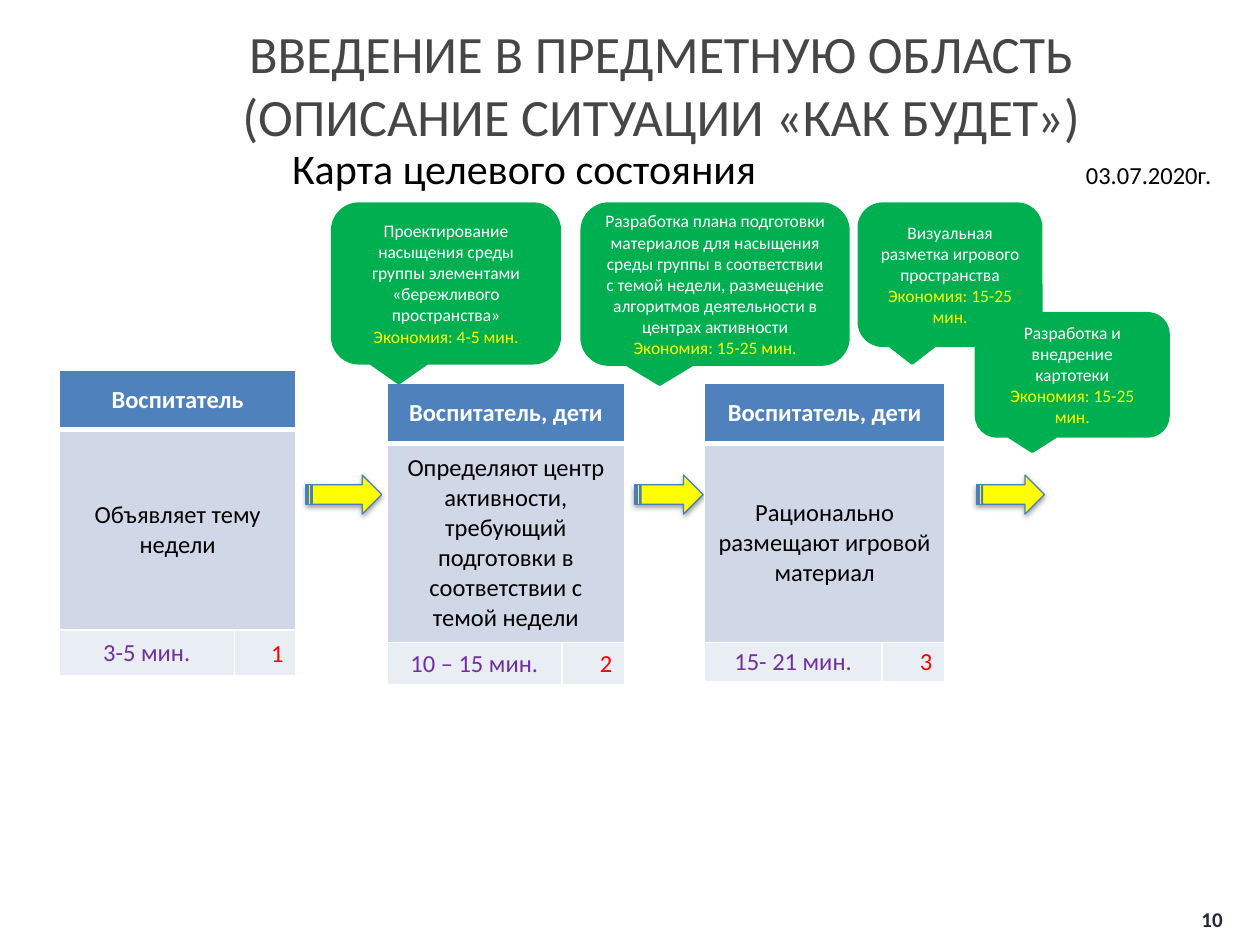
from dataclasses import dataclass

import lxml.etree
import pptx
import pptx.dml.color
import pptx.enum.shapes
import pptx.enum.text
import pptx.oxml
import pptx.oxml.ns
import pptx.util

Inches = pptx.util.Inches
Pt = pptx.util.Pt
SHAPE = pptx.enum.shapes.MSO_SHAPE
ALIGN = pptx.enum.text.PP_ALIGN
ANCHOR = pptx.enum.text.MSO_ANCHOR
NS = pptx.oxml.ns.nsdecls("a")


@dataclass(frozen=True)
class Theme:
    """Colours, font and type sizes of the slide."""
    font: str = "Calibri"
    title: str = "464646"
    number: str = "24263C"
    black: str = "000000"
    white: str = "FFFFFF"
    green: str = "00B050"
    yellow: str = "FFFF00"
    arrow_line: str = "4B7EBC"
    header: str = "4F81BD"
    body: str = "D0D8E8"
    footer: str = "E9EDF4"
    time: str = "7030A0"
    step: str = "FF0000"
    title_size: int = 30
    heading_size: int = 24
    table_size: int = 14
    number_size: int = 12
    callout_size: int = 10


THEME = Theme()

STEPS = [
    ((0.47, 2.94), (1.39, 0.49), (0.47, 1.59, 0.36), 0.05,
     ("Воспитатель", "Объявляет тему недели", "3-5 мин.")),
    ((3.07, 3.04), (1.39, 0.5), (0.48, 1.58, 0.32), 0.05,
     ("Воспитатель, дети",
      "Определяют центр активности, требующий подготовки в соответствии с темой недели",
      "10 – 15 мин.")),
    ((5.59, 3.04), (1.41, 0.5), (0.48, 1.58, 0.31), 0.04,
     ("Воспитатель, дети", "Рационально размещают игровой материал", "15- 21 мин.")),
]

ARROWS = [(2.43, 3.77, 0.6, 0.31), (5.04, 3.77, 0.54, 0.31), (7.75, 3.77, 0.54, 0.31)]

CALLOUTS = [
    ((2.64, 1.62, 1.8, 1.26),
     "Проектирование насыщения среды группы элементами «бережливого пространства»",
     "Экономия: 4-5 мин."),
    ((6.82, 1.62, 1.44, 1.12), "Визуальная разметка игрового пространства",
     "Экономия: 15-25 мин."),
    ((7.75, 2.49, 1.52, 0.97), "Разработка и внедрение картотеки",
     "Экономия: 15-25 мин."),
    ((4.62, 1.62, 2.11, 1.27),
     "Разработка плана подготовки материалов для насыщения среды группы в соответствии "
     "с темой недели, размещение алгоритмов деятельности в центрах активности",
     "Экономия: 15-25 мин."),
]


def rgb(color):
    """Return a colour object for a hex string."""
    return pptx.dml.color.RGBColor.from_string(color)


def style_font(font, size, color, bold=False):
    """Set the face, size, colour and weight of a font."""
    font.name, font.size, font.bold = THEME.font, Pt(size), bold
    font.color.rgb = rgb(color)


def write(p, text, size, color, align=ALIGN.CENTER, bold=False):
    """Fill a paragraph with evenly styled text."""
    p.text, p.alignment = text, align
    style_font(p.font, size, color, bold)


def add_text_frame(slide, box, wrap=True):
    """Add a middle-anchored text box and return its frame."""
    tf = slide.shapes.add_textbox(*map(Inches, box)).text_frame
    tf.word_wrap, tf.vertical_anchor = wrap, ANCHOR.MIDDLE
    return tf


def add_title(slide, box):
    """Add the two-line slide title."""
    p = add_text_frame(slide, box).paragraphs[0]
    write(p, "ВВЕДЕНИЕ В ПРЕДМЕТНУЮ ОБЛАСТЬ\v(ОПИСАНИЕ СИТУАЦИИ «КАК БУДЕТ»)",
          THEME.title_size, THEME.title)


def add_heading(slide, box):
    """Add the map heading and its date on two tab stops."""
    p = add_text_frame(slide, box).paragraphs[0]
    p.alignment = ALIGN.LEFT
    tabs = lxml.etree.SubElement(p._p.get_or_add_pPr(), pptx.oxml.ns.qn("a:tabLst"))
    for pos in (2, 8.3):
        lxml.etree.SubElement(tabs, pptx.oxml.ns.qn("a:tab"), pos=str(Inches(pos)), algn="l")
    for text, size in (("\tКарта целевого состояния\t", THEME.heading_size),
                       ("03.07.2020г.", THEME.table_size)):
        r = p.add_run()
        r.text = text
        style_font(r.font, size, THEME.black)


def add_page_number(slide, box):
    """Add the page number."""
    p = add_text_frame(slide, box, wrap=False).paragraphs[0]
    write(p, "10", THEME.number_size, THEME.number, bold=True)


def add_block(slide, kind, box, fill, line, width):
    """Add a filled and outlined preset shape."""
    sp = slide.shapes.add_shape(kind, *map(Inches, box))
    sp.shadow.inherit = False
    sp.fill.solid()
    sp.fill.fore_color.rgb = rgb(fill)
    sp.line.color.rgb = rgb(line)
    sp.line.width = Pt(width)
    return sp


def add_arrow(slide, box):
    """Add a striped arrow with a soft shadow below it."""
    sp = add_block(slide, SHAPE.STRIPED_RIGHT_ARROW, box, THEME.yellow, THEME.arrow_line, 0.75)
    effects = sp._element.spPr.find(pptx.oxml.ns.qn("a:effectLst"))
    effects.append(pptx.oxml.parse_xml(
        f'<a:outerShdw {NS} blurRad="{Pt(3.1)}" dist="{Pt(1.6)}" dir="5400000" rotWithShape="0">'
        f'<a:srgbClr val="{THEME.black}"><a:alpha val="38000"/></a:srgbClr></a:outerShdw>'))


def add_callout(slide, box, action, saving):
    """Add a green callout with an action and the time it saves."""
    sp = add_block(slide, SHAPE.ROUNDED_RECTANGULAR_CALLOUT, box, THEME.green, THEME.green, 2)
    tf = sp.text_frame
    tf.word_wrap, tf.vertical_anchor = True, ANCHOR.MIDDLE
    write(tf.paragraphs[0], action, THEME.callout_size, THEME.white)
    write(tf.add_paragraph(), saving, THEME.callout_size, THEME.yellow)


def style_cell(cell, fill, margin, top, bottom):
    """Set the fill, margins and white borders of a cell."""
    cell.fill.solid()
    cell.fill.fore_color.rgb = rgb(fill)
    cell.margin_left = cell.margin_right = Inches(0.1)
    cell.margin_top = cell.margin_bottom = Inches(margin)
    cell.vertical_anchor = ANCHOR.MIDDLE
    tcPr = cell._tc.get_or_add_tcPr()
    for i, (side, width) in enumerate((("L", 1), ("R", 1), ("T", top), ("B", bottom))):
        tcPr.insert(i, pptx.oxml.parse_xml(
            f'<a:ln{side} {NS} w="{Pt(width)}"><a:solidFill><a:srgbClr val="{THEME.white}"/>'
            f'</a:solidFill></a:ln{side}>'))


def add_step(slide, origin, cols, rows, margin, texts, number):
    """Add the table of one step: who, what, how long and its number."""
    box = (*origin, sum(cols), sum(rows))
    table = slide.shapes.add_table(3, 2, *map(Inches, box)).table
    for col, width in zip(table.columns, cols):
        col.width = Inches(width)
    looks = ((THEME.header, THEME.white, 1, 3), (THEME.body, THEME.black, 3, 1),
             (THEME.footer, THEME.time, 1, 1))
    for i, (text, (fill, color, top, bottom)) in enumerate(zip(texts, looks)):
        table.rows[i].height = Inches(rows[i])
        for j in range(2):
            style_cell(table.cell(i, j), fill, margin, top, bottom)
        if i < 2:
            table.cell(i, 0).merge(table.cell(i, 1))
        write(table.cell(i, 0).text_frame.paragraphs[0], text, THEME.table_size, color,
              bold=i == 0)
    last = table.cell(2, 1)
    last.vertical_anchor = ANCHOR.BOTTOM
    write(last.text_frame.paragraphs[0], str(number), THEME.table_size, THEME.step, ALIGN.RIGHT)


def main():
    """Build and save the slide."""
    prs = pptx.Presentation()
    prs.slide_width, prs.slide_height = Inches(10), Inches(7.5)
    slide = prs.slides.add_slide(prs.slide_layouts[6])
    add_heading(slide, (0.22, 1.15, 9.5, 0.37))
    add_page_number(slide, (9.43, 7.14, 0.38, 0.31))
    add_title(slide, (0.5, 0.21, 9.5, 0.92))
    for box in ARROWS:
        add_arrow(slide, box)
    for number, step in enumerate(STEPS, 1):
        add_step(slide, *step, number)
    for callout in CALLOUTS:
        add_callout(slide, *callout)
    prs.save("out.pptx")


if __name__ == "__main__":
    main()
